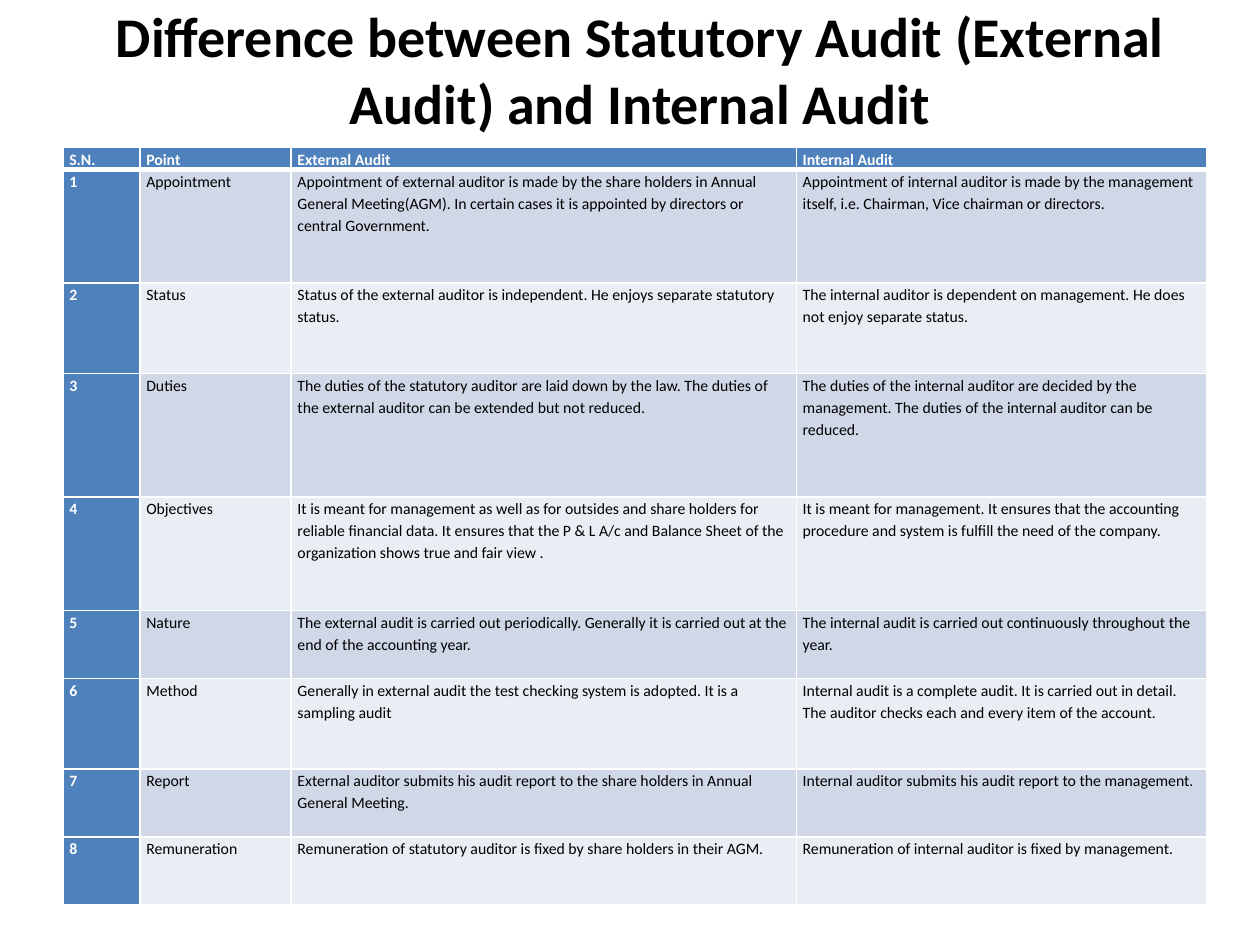
from typing import NamedTuple

from lxml import etree
from pptx import Presentation
from pptx.dml.color import RGBColor
from pptx.enum.text import MSO_ANCHOR, MSO_AUTO_SIZE, PP_ALIGN
from pptx.oxml.ns import qn
from pptx.util import Pt

CENTER = PP_ALIGN.CENTER
MIDDLE = MSO_ANCHOR.MIDDLE
NO_AUTOFIT = MSO_AUTO_SIZE.NONE
TITLE_ONLY = 5

FONT = "Calibri"
COLORS = {
    "black": "000000",
    "white": "FFFFFF",
    "accent": "4F81BD",
    "dark_band": "D0D8E8",
    "light_band": "E9EDF4",
}
COLUMN_WIDTHS = (44, 86.4, 288.7, 234.7)
HEADER_HEIGHT = 12.2
CELL_MARGINS = {
    "margin_left": Pt(3.6),
    "margin_right": Pt(3.6),
    "margin_top": 0,
    "margin_bottom": 0,
}
THIN, THICK = 1, 3

TITLE = "Difference between Statutory Audit (External Audit) and Internal Audit"
HEADINGS = ("S.N.", "Point", "External Audit", "Internal Audit")


class Comparison(NamedTuple):
    point: str
    external: str
    internal: str
    height: float


COMPARISONS = (
    Comparison(
        "Appointment",
        "Appointment of external auditor is made by the share holders in Annual "
        "General Meeting(AGM). In certain cases it is appointed by directors or "
        "central Government.",
        "Appointment of internal auditor is made by the management itself, i.e. "
        "Chairman, Vice chairman or directors.",
        64.8,
    ),
    Comparison(
        "Status",
        "Status of the external auditor is independent. He enjoys separate "
        "statutory status.",
        "The internal auditor is dependent on management. He does not enjoy "
        "separate status.",
        51.8,
    ),
    Comparison(
        "Duties",
        "The duties of the statutory auditor are laid down by the law. The duties "
        "of the external auditor can be extended but not reduced.",
        "The duties of the internal auditor are decided by the management. The "
        "duties of the internal auditor can be reduced.",
        70.6,
    ),
    Comparison(
        "Objectives",
        "It is meant for management as well as for outsides and share holders for "
        "reliable financial data. It ensures that the P & L A/c and Balance Sheet "
        "of the organization shows true and fair view .",
        "It is meant for management. It ensures that the accounting procedure and "
        "system is fulfill the need of the company.",
        64.8,
    ),
    Comparison(
        "Nature",
        "The external audit is carried out periodically. Generally it is carried "
        "out at the end of the accounting year.",
        "The internal audit is carried out continuously throughout the year.",
        38.9,
    ),
    Comparison(
        "Method",
        "Generally in external audit the test checking system is adopted. It is a "
        "sampling audit",
        "Internal audit is a complete audit. It is carried out in detail. The "
        "auditor checks each and every item of the account.",
        51.8,
    ),
    Comparison(
        "Report",
        "External auditor submits his audit report to the share holders in Annual "
        "General Meeting.",
        "Internal auditor submits his audit report to the management.",
        38.9,
    ),
    Comparison(
        "Remuneration",
        "Remuneration of statutory auditor is fixed by share holders in their AGM.",
        "Remuneration of internal auditor is fixed by management.",
        38.9,
    ),
)


def set_attributes(target, values: dict) -> None:
    for name, value in values.items():
        setattr(target, name, value)


def add_span(para, text: str, size: float, color: str, bold: bool) -> None:
    span = para.add_run()
    span.text = text
    set_attributes(span.font, {"name": FONT, "size": Pt(size), "bold": bold})
    span.font.color.rgb = RGBColor.from_string(COLORS[color])


def set_borders(cell, top: float, bottom: float) -> None:
    """Draw white borders, placed before the fill as the schema requires."""
    properties = cell._tc.get_or_add_tcPr()
    widths = {"lnL": THIN, "lnR": THIN, "lnT": top, "lnB": bottom}
    for position, (tag, width) in enumerate(widths.items()):
        line = etree.Element(qn(f"a:{tag}"), w=str(Pt(width)))
        fill = etree.SubElement(line, qn("a:solidFill"))
        etree.SubElement(fill, qn("a:srgbClr"), val=COLORS["white"])
        properties.insert(position, line)


def fill_cell(cell, text: str, row: int, column: int) -> None:
    is_heading = row == 0 or column == 0
    band = "dark_band" if row % 2 else "light_band"
    set_attributes(cell, CELL_MARGINS)
    cell.fill.solid()
    cell.fill.fore_color.rgb = RGBColor.from_string(
        COLORS["accent" if is_heading else band]
    )
    set_borders(
        cell,
        top=THICK if row == 1 else THIN,
        bottom=THICK if row == 0 else THIN,
    )
    para = cell.text_frame.paragraphs[0]
    para.line_spacing = 1.15
    add_span(para, text, 9, "white" if is_heading else "black", is_heading)


def add_title(slide) -> None:
    box = slide.shapes.title
    set_attributes(
        box,
        {"left": Pt(42), "top": Pt(6), "width": Pt(648), "height": Pt(66)},
    )
    set_attributes(
        box.text_frame,
        {"word_wrap": True, "auto_size": NO_AUTOFIT, "vertical_anchor": MIDDLE},
    )
    para = box.text_frame.paragraphs[0]
    para.alignment = CENTER
    add_span(para, TITLE, 32, "black", True)


def add_comparison_table(slide) -> None:
    rows = [HEADINGS] + [
        (str(number), item.point, item.external, item.internal)
        for number, item in enumerate(COMPARISONS, start=1)
    ]
    heights = [HEADER_HEIGHT] + [item.height for item in COMPARISONS]
    table = slide.shapes.add_table(
        len(rows), len(HEADINGS), Pt(36), Pt(84.2),
        Pt(sum(COLUMN_WIDTHS)), Pt(sum(heights)),
    ).table
    for column, width in zip(table.columns, COLUMN_WIDTHS):
        column.width = Pt(width)
    for row, (texts, height) in enumerate(zip(rows, heights)):
        table.rows[row].height = Pt(height)
        for column, text in enumerate(texts):
            fill_cell(table.cell(row, column), text, row, column)


def main() -> None:
    deck = Presentation()
    set_attributes(deck, {"slide_width": Pt(720), "slide_height": Pt(540)})
    page = deck.slides.add_slide(deck.slide_layouts[TITLE_ONLY])
    add_title(page)
    add_comparison_table(page)
    deck.save("out.pptx")


if __name__ == "__main__":
    main()
